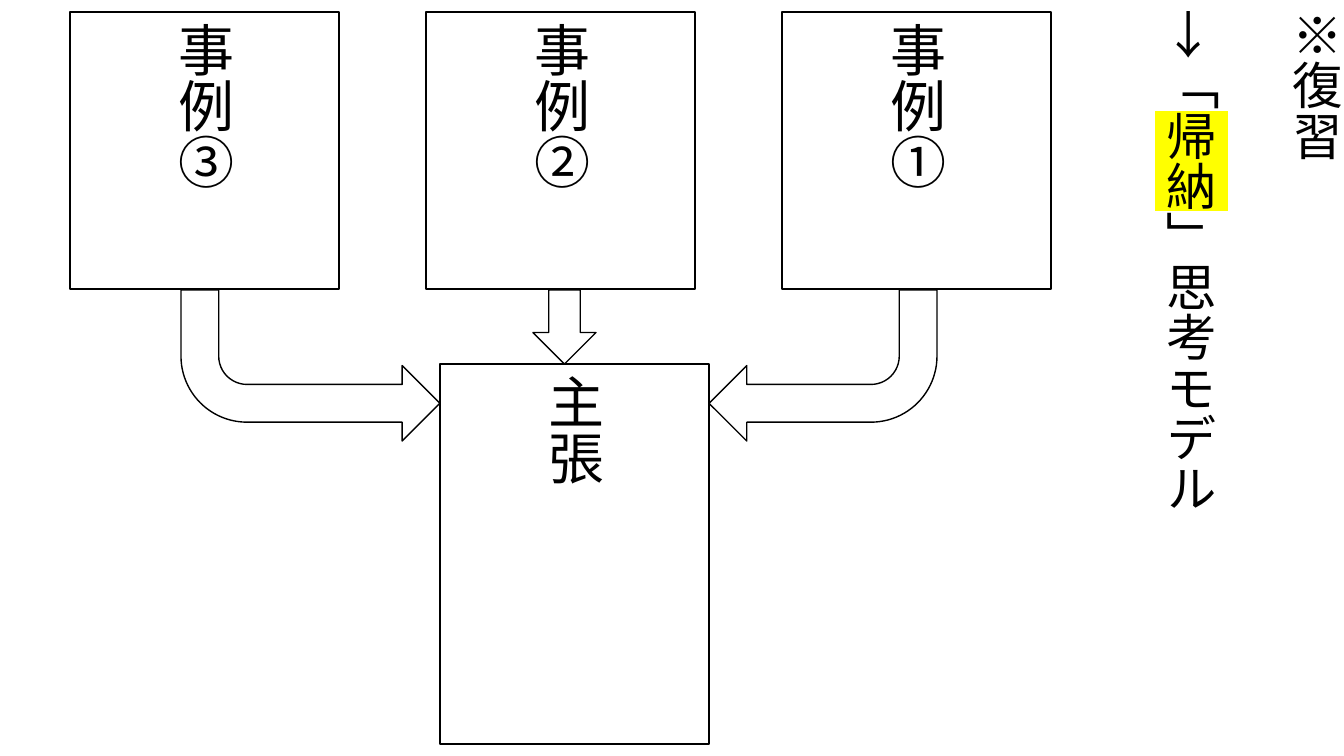
import pptx
import pptx.util
import pptx.dml.color
import pptx.enum.shapes
import pptx.enum.text
import lxml.etree

Shape = pptx.enum.shapes.MSO_SHAPE
Align = pptx.enum.text.PP_ALIGN
Anchor = pptx.enum.text.MSO_ANCHOR
BLACK = pptx.dml.color.RGBColor(0, 0, 0)
WHITE = pptx.dml.color.RGBColor(255, 255, 255)
YELLOW = pptx.dml.color.RGBColor(255, 255, 0)
FONT = "Noto Sans CJK JP"
SCALE = 914400 / 100.8


def px(*sizes):
    return [pptx.util.Emu(round(size * SCALE)) for size in sizes]


def add_run(para, text, size, mark=None):
    run = para.add_run()
    run.text = text
    run.font.size = pptx.util.Pt(size)
    run.font.name = FONT
    run.font.color.rgb = BLACK
    props = run.font._element
    latin = props.find(pptx.oxml.ns.qn("a:latin"))
    east = lxml.etree.Element(pptx.oxml.ns.qn("a:ea"), typeface=FONT)
    latin.addnext(east)
    if mark is not None:
        light = lxml.etree.Element(pptx.oxml.ns.qn("a:highlight"))
        lxml.etree.SubElement(light, pptx.oxml.ns.qn("a:srgbClr"), val=str(mark))
        latin.addprevious(light)


def set_upright(frame):
    frame.word_wrap = True
    frame._txBody.bodyPr.set("vert", "eaVert")


def add_form(slide, kind, box):
    form = slide.shapes.add_shape(kind, *px(*box))
    form.shadow.inherit = False
    form.fill.solid()
    form.fill.fore_color.rgb = WHITE
    form.line.color.rgb = BLACK
    form.line.width = pptx.util.Pt(1)
    return form


def add_card(slide, box, label):
    frame = add_form(slide, Shape.RECTANGLE, box).text_frame
    set_upright(frame)
    frame.vertical_anchor = Anchor.MIDDLE
    para = frame.paragraphs[0]
    para.alignment = Align.CENTER
    add_run(para, label, 40)


def add_title(slide, box):
    frame = slide.shapes.add_textbox(*px(*box)).text_frame
    set_upright(frame)
    lines = [
        (10, [("※復習", None)]),
        (51, [("→「", None), ("帰納", YELLOW), ("」思考モデル", None)]),
    ]
    for order, (gap, parts) in enumerate(lines):
        para = frame.add_paragraph() if order else frame.paragraphs[0]
        para.line_spacing = 0.9
        para.space_before = pptx.util.Pt(gap)
        for text, mark in parts:
            add_run(para, text, 36, mark)


def add_model(slide, box):
    left, top, width, height = box
    card, tall, pitch = 269, 277, 356
    for order, label in enumerate(("事例③", "事例②", "事例①")):
        add_card(slide, (left + order * pitch, top, card, tall), label)
    claim, deep = left + 370, 380
    roof = top + height - deep
    add_card(slide, (claim, roof, card, deep), "主張")

    base = top + tall + 1
    inset, bend = 111, 151
    start = left + inset
    end = claim + card
    right = add_form(slide, Shape.BENT_ARROW, (end, base, 228, bend))
    right.rotation = 180
    add_form(slide, Shape.DOWN_ARROW, (left + 463, base, 63, roof - base))
    turn = add_form(slide, Shape.BENT_ARROW, (start, base, claim - start, bend))
    turn.rotation = 180
    turn._element.spPr.xfrm.set("flipH", "1")


def main():
    deck = pptx.Presentation()
    deck.slide_width, deck.slide_height = px(1344, 756)
    slide = deck.slides.add_slide(deck.slide_layouts[6])
    add_title(slide, (0, 0, 1344, 796))
    add_model(slide, (70, 12, 982, 732))
    deck.save("out.pptx")


if __name__ == "__main__":
    main()
